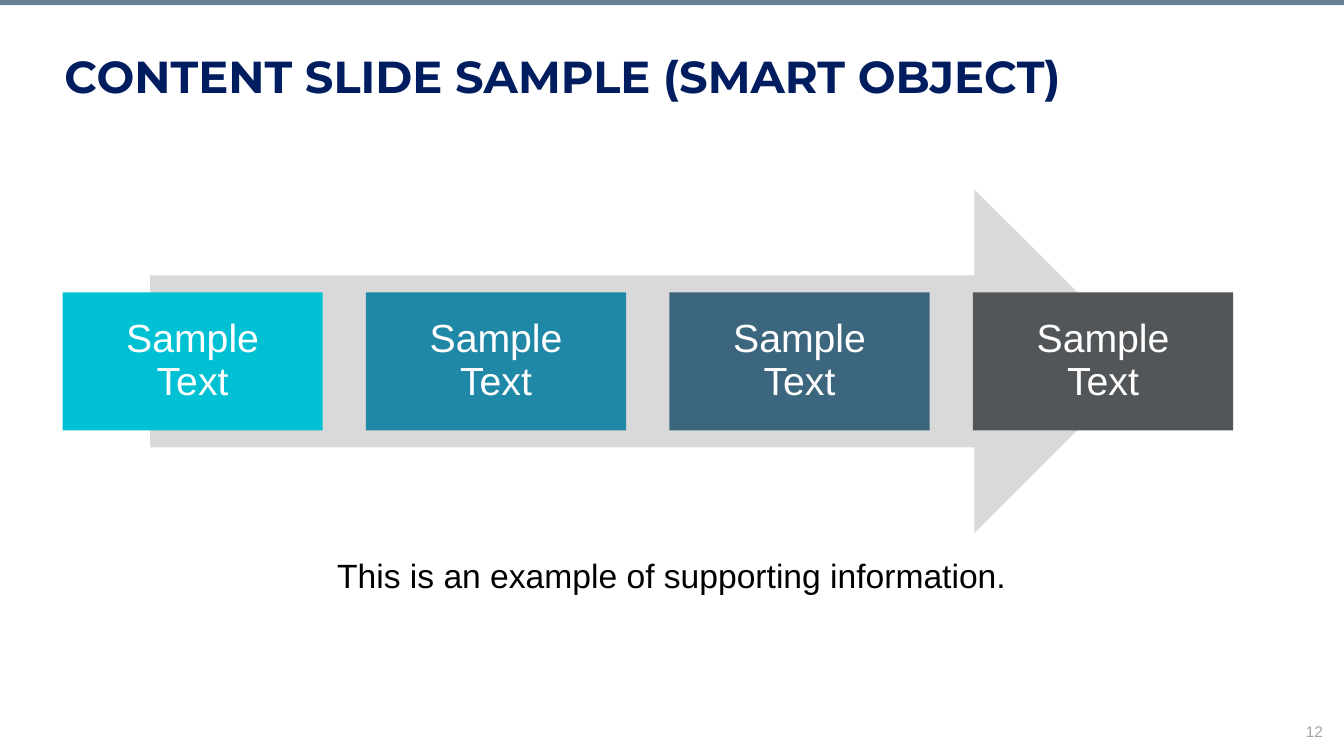
from pptx import Presentation
from pptx.dml.color import RGBColor
from pptx.enum.shapes import MSO_SHAPE
from pptx.enum.text import MSO_ANCHOR, PP_ALIGN
from pptx.util import Inches, Pt

NAVY = RGBColor(0x00, 0x1D, 0x5F)
SLATE = RGBColor(0x68, 0x80, 0x96)
LIGHT_GREY = RGBColor(0xD9, 0xD9, 0xD9)
MID_GREY = RGBColor(0xA6, 0xA6, 0xA6)
WHITE = RGBColor(0xFF, 0xFF, 0xFF)
BLACK = RGBColor(0x00, 0x00, 0x00)
STEP_COLOURS = [
    RGBColor(0x00, 0xC1, 0xD4),
    RGBColor(0x20, 0x88, 0xA7),
    RGBColor(0x3C, 0x66, 0x7E),
    RGBColor(0x53, 0x56, 0x59),
]
STEP_LEFT, STEP_TOP, STEP_WIDTH, STEP_HEIGHT = 0.62, 2.9, 2.58, 1.37
STEP_PITCH = 3.01


def apply_format(target, values):
    for name, value in values.items():
        setattr(target, name, value)


def write_text(shape, text, size, colour, font="Arial", bold=False,
               frame_format=None, **para_format):
    frame = shape.text_frame
    apply_format(frame, {"word_wrap": True, **(frame_format or {})})
    para = frame.paragraphs[0]
    para.text = text
    apply_format(para, para_format)
    for span in para.runs:
        apply_format(span.font, {"name": font, "size": Pt(size), "bold": bold})
        span.font.color.rgb = colour


def add_block(page, kind, left, top, width, height, colour):
    block = page.shapes.add_shape(
        kind, Inches(left), Inches(top), Inches(width), Inches(height))
    block.shadow.inherit = False
    block.fill.solid()
    block.fill.fore_color.rgb = colour
    block.line.fill.background()
    return block


def add_text(page, left, top, width, height, *content, **options):
    box = page.shapes.add_textbox(
        Inches(left), Inches(top), Inches(width), Inches(height))
    write_text(box, *content, **options)


def add_step(page, index, colour):
    step = add_block(page, MSO_SHAPE.RECTANGLE, STEP_LEFT + index * STEP_PITCH,
                     STEP_TOP, STEP_WIDTH, STEP_HEIGHT, colour)
    sides = ("left", "top", "right", "bottom")
    frame_format = {f"margin_{side}": Inches(0.12) for side in sides}
    frame_format["vertical_anchor"] = MSO_ANCHOR.MIDDLE
    write_text(step, "Sample\nText", 28, WHITE, frame_format=frame_format,
               alignment=PP_ALIGN.CENTER, line_spacing=0.9)


def main():
    deck = Presentation()
    deck.slide_width, deck.slide_height = Inches(13.33), Inches(7.5)
    page = deck.slides.add_slide(deck.slide_layouts[6])

    add_text(page, 9.2, 7.11, 4.02, 0.29, "12", 11, MID_GREY,
             alignment=PP_ALIGN.RIGHT)
    add_block(page, MSO_SHAPE.RECTANGLE, 0, 0, 13.33, 0.05, SLATE)
    add_text(page, 0.54, 0.49, 12.24, 0.77,
             "CONTENT SLIDE SAMPLE (SMART OBJECT)", 32, NAVY,
             font="Montserrat", bold=True, line_spacing=0.9)
    add_block(page, MSO_SHAPE.RIGHT_ARROW, 1.49, 1.88, 9.88, 3.41, LIGHT_GREY)
    for index, colour in enumerate(STEP_COLOURS):
        add_step(page, index, colour)
    add_text(page, 2.07, 5.5, 9.18, 0.7,
             "This is an example of supporting information.", 24, BLACK,
             alignment=PP_ALIGN.CENTER, line_spacing=0.9)

    deck.save("out.pptx")


if __name__ == "__main__":
    main()
